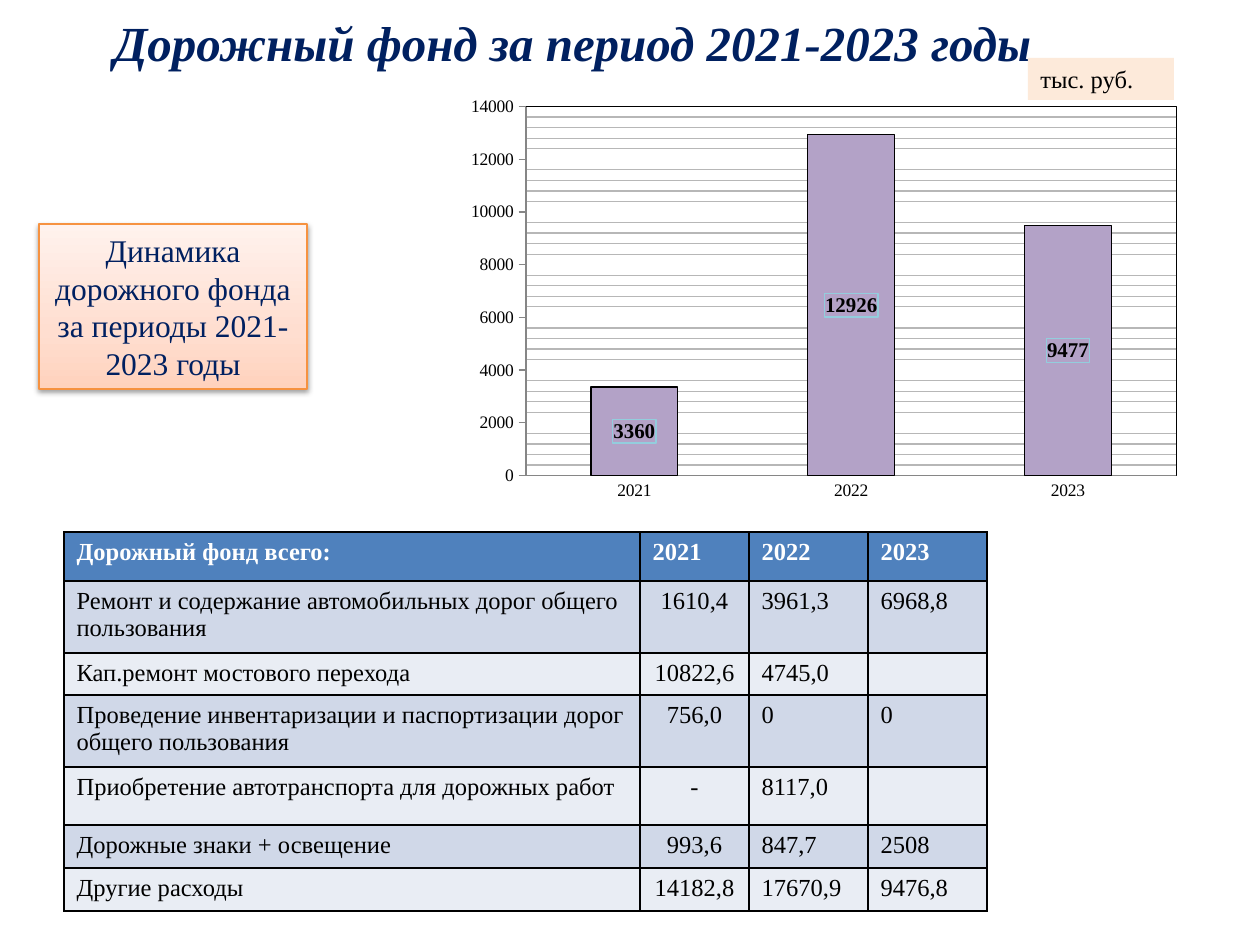
from dataclasses import dataclass
from lxml.etree import SubElement
from pptx import Presentation
from pptx.chart.data import CategoryChartData as ChartData
from pptx.dml.color import RGBColor as RGB
from pptx.enum.chart import XL_CHART_TYPE as Kind, XL_TICK_MARK as Tick
from pptx.enum.shapes import MSO_SHAPE as Geom
from pptx.enum.text import MSO_ANCHOR as Anchor, MSO_AUTO_SIZE as Fit, PP_ALIGN as Align
from pptx.oxml import parse_xml
from pptx.oxml.ns import nsdecls, qn
from pptx.util import Emu, Pt


@dataclass(frozen=True)
class Theme:
    face: str = "Times New Roman"
    ink: str = "000000"
    navy: str = "002060"
    white: str = "FFFFFF"
    head: str = "4F81BD"
    odd: str = "D0D8E8"
    even: str = "E9EDF4"
    bar: str = "B3A2C7"
    grid: str = "B7B7B7"
    axis: str = "868686"
    tag: str = "93CDDD"
    peach: str = "FDEADA"
    edge: str = "F69240"
    glow: tuple = ((0, "FFD2BD"), (35, "FFDED0"), (100, "FFF2ED"))
    big: int = 28
    note: int = 18
    body: int = 14
    label: int = 12
    small: int = 10


T = Theme()
YEARS = ["2021", "2022", "2023"]
TOTALS = [3360, 12926, 9477]
COLS = [576, 109, 119, 119]
ROWS = [
    (49, "Дорожный фонд всего:", *YEARS),
    (72, "Ремонт и содержание автомобильных дорог общего пользования",
     "1610,4", "3961,3", "6968,8"),
    (42, "Кап.ремонт мостового перехода", "10822,6", "4745,0", ""),
    (72, "Проведение инвентаризации и паспортизации дорог общего пользования",
     "756,0", "0", "0"),
    (58, "Приобретение автотранспорта для дорожных работ", "-", "8117,0", ""),
    (43, "Дорожные знаки + освещение", "993,6", "847,7", "2508"),
    (43, "Другие расходы", "14182,8", "17670,9", "9476,8"),
]


def px(n):
    return Emu(round(n * 914400 / 126))


def style(font, size, color=T.ink, bold=False, italic=False):
    font.name, font.size = T.face, Pt(size)
    font.bold, font.italic = bold, italic
    font.color.rgb = RGB.from_string(color)


def put(frame, text, size=T.body, align=Align.LEFT, **look):
    frame.word_wrap = True
    para = frame.paragraphs[0]
    para.alignment = align
    if text:
        run = para.add_run()
        run.text = text
        style(run.font, size, **look)
    else:
        # An empty cell keeps the text size, so its row does not grow
        SubElement(para._p, qn("a:endParaRPr"), sz=str(size * 100))


def stroke(line, color, width=0.75):
    line.color.rgb = RGB.from_string(color)
    line.width = Pt(width)


def paint(fill, color):
    fill.solid()
    fill.fore_color.rgb = RGB.from_string(color)


def outline(color):
    return parse_xml(
        f'<c:spPr {nsdecls("c", "a")}><a:noFill/><a:ln w="9525"><a:solidFill>'
        f'<a:srgbClr val="{color}"/></a:solidFill></a:ln></c:spPr>')


def add_title(slide, text):
    title = slide.shapes.title
    title.left, title.top, title.width, title.height = map(px, (39, 6, 1067, 72))
    put(title.text_frame, text, T.big, Align.CENTER,
        color=T.navy, bold=True, italic=True)
    title.text_frame.auto_size = Fit.SHAPE_TO_FIT_TEXT
    title.text_frame.vertical_anchor = Anchor.TOP


def add_box(slide, area, text, size, **look):
    box = slide.shapes.add_shape(Geom.RECTANGLE, *map(px, area))
    box.shadow.inherit = False
    paint(box.fill, T.peach)
    box.line.fill.background()
    put(box.text_frame, text, size, **look)
    box.text_frame.auto_size = Fit.SHAPE_TO_FIT_TEXT
    return box


def add_glow(box):
    # Three-stop gradient, running upwards
    box.fill.gradient()
    box.fill.gradient_angle = 90
    stops = box._element.spPr.find(".//" + qn("a:gsLst"))
    for stop in list(stops):
        stops.remove(stop)
    for pos, color in T.glow:
        stop = SubElement(stops, qn("a:gs"), pos=str(pos * 1000))
        SubElement(stop, qn("a:srgbClr"), val=color)
    stroke(box.line, T.edge)
    # Soft shadow below
    fx = box._element.spPr.find(qn("a:effectLst"))
    fx.append(parse_xml(
        f'<a:outerShdw {nsdecls("a")} blurRad="39370" dist="20320" dir="5400000" '
        f'rotWithShape="0"><a:srgbClr val="{T.ink}"><a:alpha val="38000"/>'
        '</a:srgbClr></a:outerShdw>'))


def add_chart(slide, area):
    data = ChartData()
    data.categories = YEARS
    data.add_series("Series 1", TOTALS)
    chart = slide.shapes.add_chart(Kind.COLUMN_STACKED, *map(px, area), data).chart
    chart.has_legend = chart.has_title = False
    style(chart.font, T.small)

    # Bars and their labels
    plot = chart.plots[0]
    plot.gap_width, plot.overlap, plot.vary_by_categories = 150, 100, False
    bars = plot.series[0]
    bars.invert_if_negative = False
    paint(bars.format.fill, T.bar)
    stroke(bars.format.line, T.ink)
    tags = bars.data_labels
    tags.show_value = True
    style(tags.font, T.label, bold=True)
    tags._element.find(qn("c:txPr")).addprevious(outline(T.tag))

    # Axes: only minor grid lines show
    cat, val = chart.category_axis, chart.value_axis
    cat.major_tick_mark, val.major_tick_mark = Tick.NONE, Tick.OUTSIDE
    val.minimum_scale, val.maximum_scale = 0, 14000
    val.major_unit, val.minor_unit = 2000, 400
    val.has_major_gridlines, val.has_minor_gridlines = False, True
    zone = chart._chartSpace.find(".//" + qn("c:plotArea"))
    zone.find(".//" + qn("c:minorGridlines")).append(outline(T.grid))
    for axis in (cat, val):
        stroke(axis.format.line, T.axis)

    # Plot frame and place
    zone.append(outline(T.ink))
    for old in zone.findall(qn("c:layout")):
        zone.remove(old)
    spots = "".join(f'<c:{key} val="{n}"/>' for key, n in
                    (("x", 0.073), ("y", 0.063), ("w", 0.904), ("h", 0.813)))
    zone.insert(0, parse_xml(
        f'<c:layout {nsdecls("c")}><c:manualLayout><c:layoutTarget val="inner"/>'
        f'<c:xMode val="edge"/><c:yMode val="edge"/>{spots}'
        '</c:manualLayout></c:layout>'))


def add_edges(cell):
    props = cell._tc.get_or_add_tcPr()
    for i, side in enumerate(("lnL", "lnR", "lnT", "lnB")):
        props.insert(i, parse_xml(
            f'<a:{side} {nsdecls("a")} w="12700"><a:solidFill>'
            f'<a:srgbClr val="{T.ink}"/></a:solidFill></a:{side}>'))


def add_table(slide, left, top):
    high = sum(row[0] for row in ROWS)
    area = map(px, (left, top, sum(COLS), high))
    table = slide.shapes.add_table(len(ROWS), len(COLS), *area).table
    for col, wide in zip(table.columns, COLS):
        col.width = px(wide)
    for r, (tall, *texts) in enumerate(ROWS):
        table.rows[r].height = px(tall)
        back = T.head if r == 0 else T.odd if r % 2 else T.even
        for c, text in enumerate(texts):
            cell = table.cell(r, c)
            put(cell.text_frame, text,
                align=Align.CENTER if r and c == 1 else Align.LEFT,
                color=T.ink if r else T.white, bold=r == 0)
            paint(cell.fill, back)
            add_edges(cell)


def main():
    deck = Presentation()
    deck.slide_width, deck.slide_height = px(1260), px(945)
    slide = deck.slides.add_slide(deck.slide_layouts[5])
    add_title(slide, "Дорожный фонд за период 2021-2023 годы")
    add_table(slide, 64, 532)
    add_chart(slide, (471, 78, 722, 454))
    note = add_box(slide, (39, 224, 268, 165),
                   "Динамика дорожного фонда за периоды 2021-2023 годы",
                   T.note, align=Align.CENTER, color=T.navy)
    add_glow(note)
    add_box(slide, (1028, 58, 146, 42), "тыс. руб.", T.body)
    deck.save("out.pptx")


if __name__ == "__main__":
    main()
